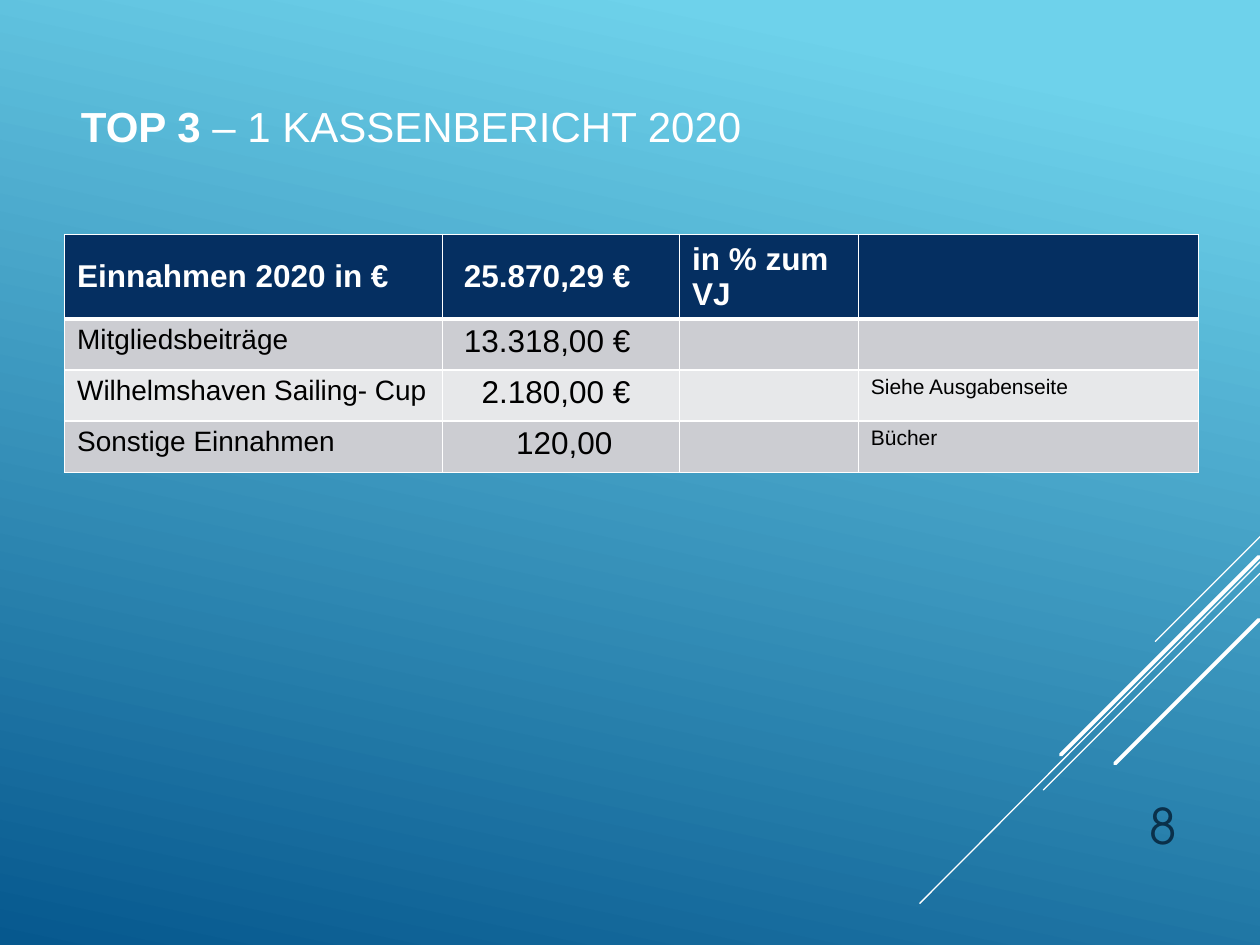
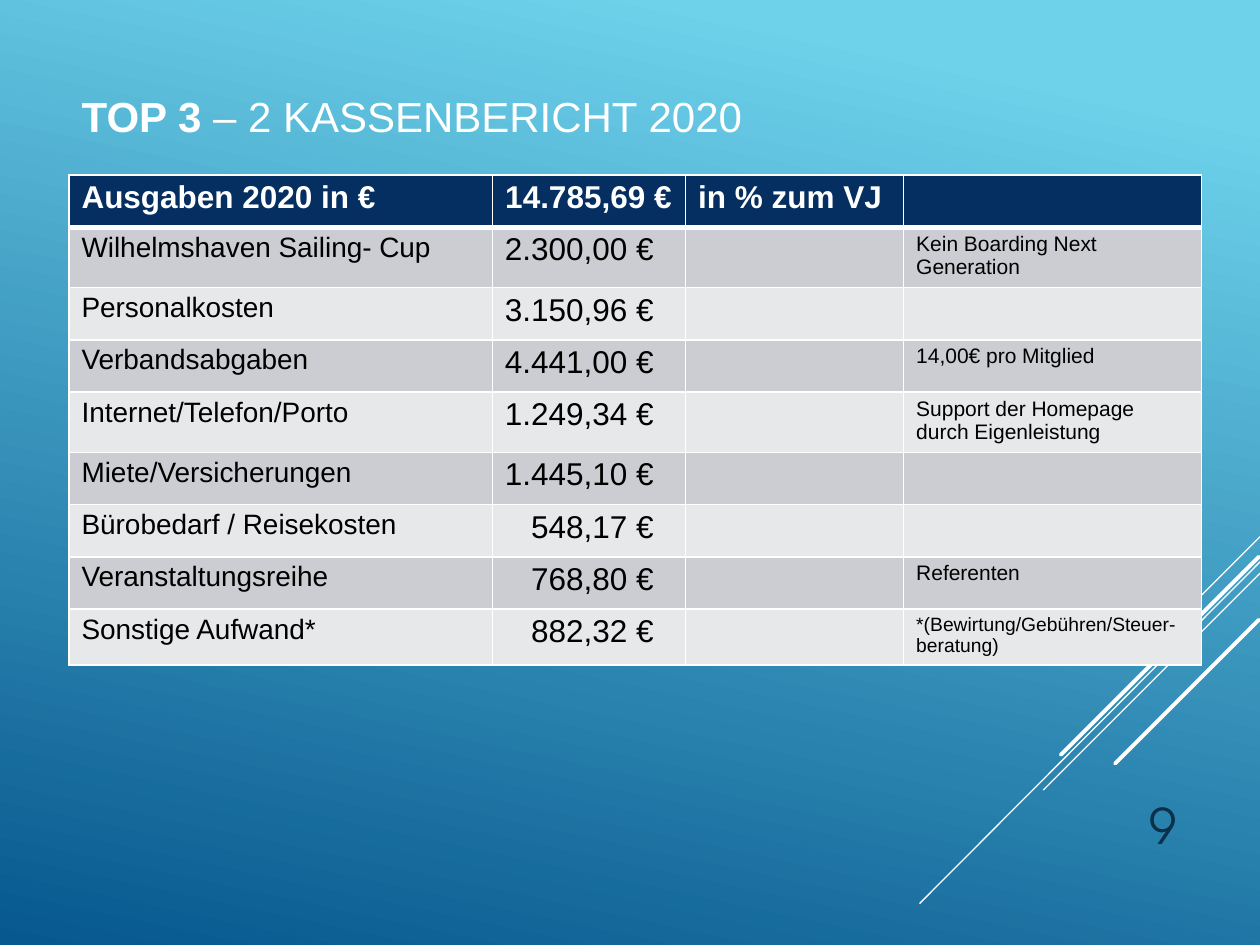
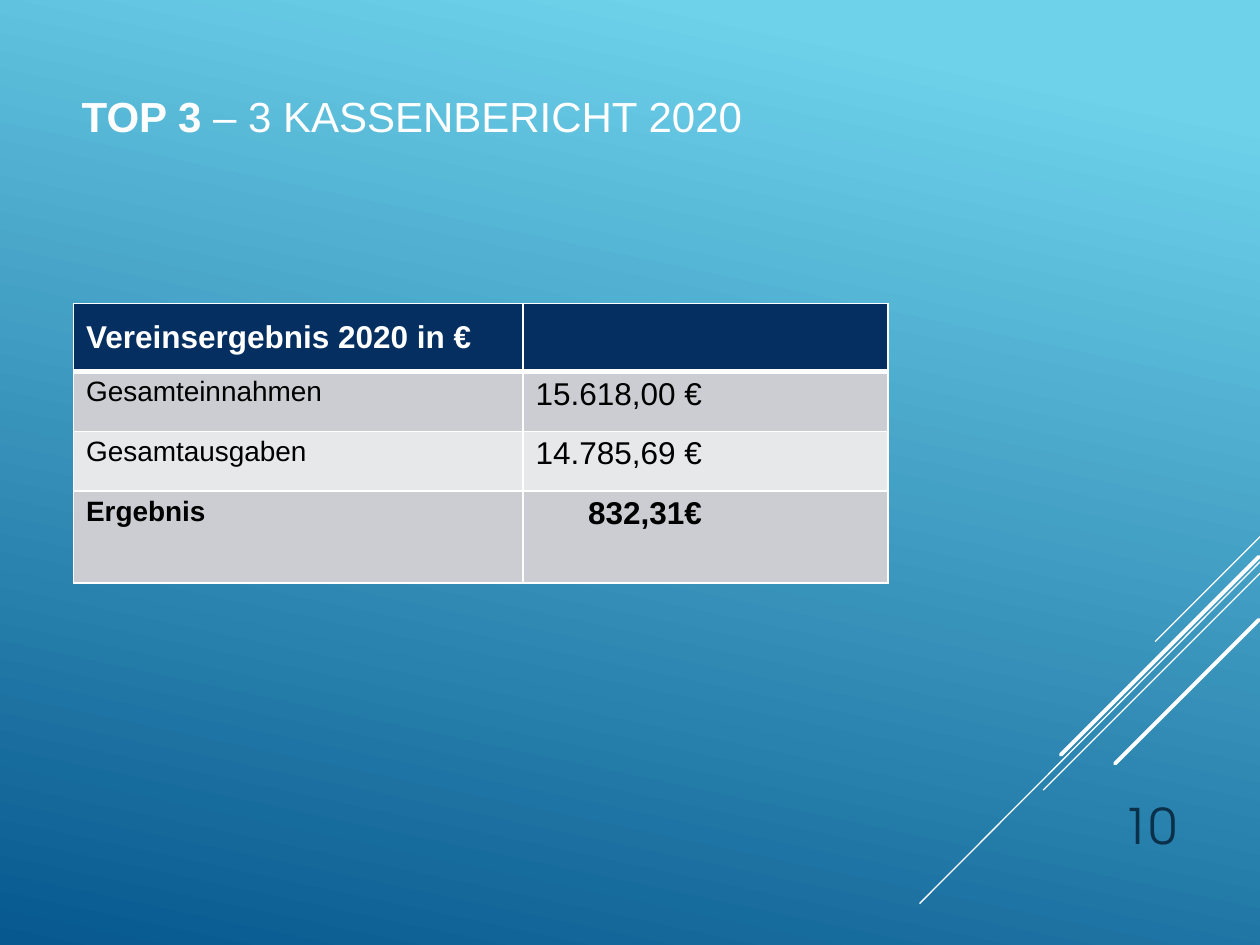
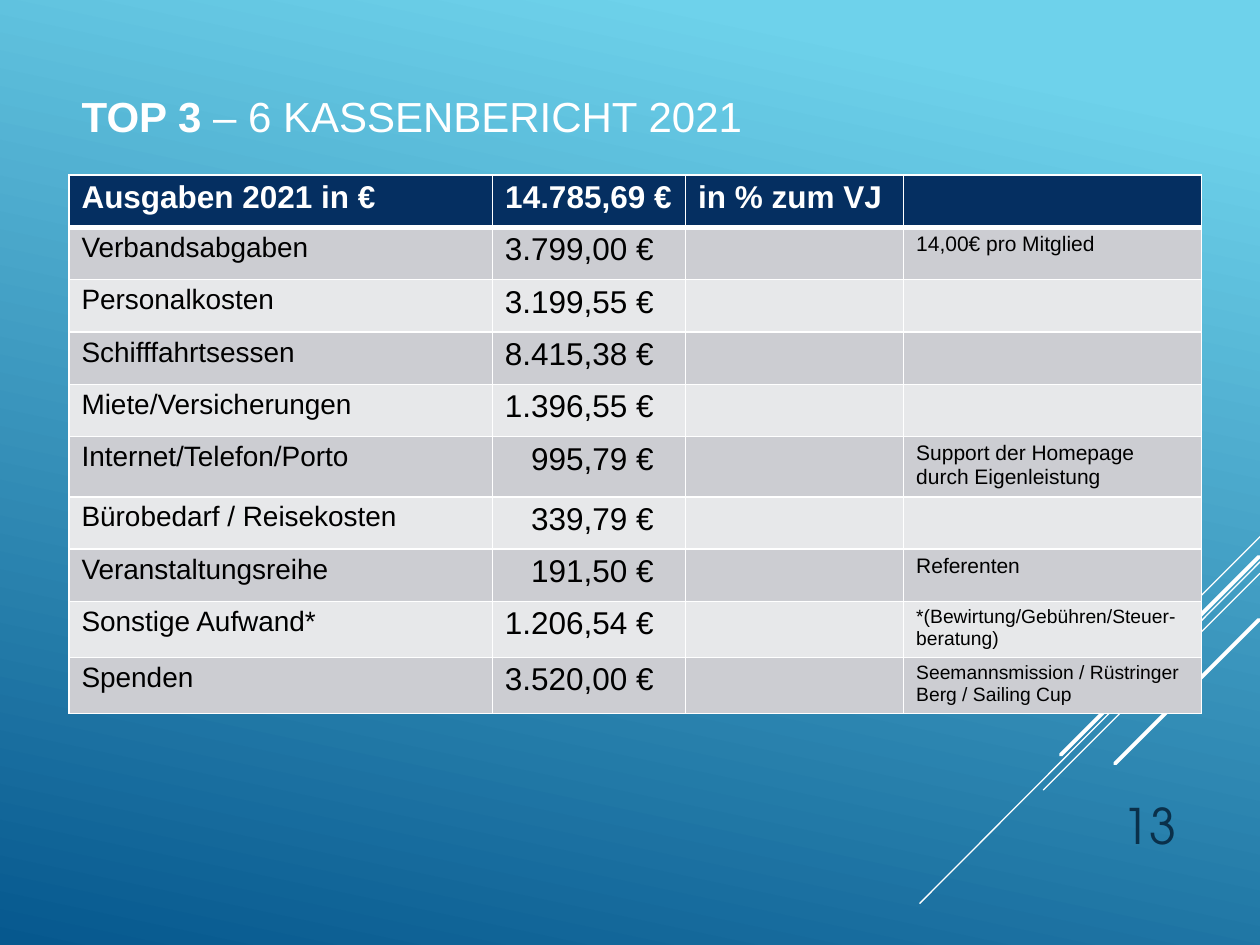
from dataclasses import dataclass

from lxml import etree
from pptx import Presentation
from pptx.dml.color import RGBColor
from pptx.enum.shapes import MSO_CONNECTOR
from pptx.enum.text import MSO_ANCHOR, PP_ALIGN
from pptx.oxml.ns import qn
from pptx.util import Pt

STRAIGHT = MSO_CONNECTOR.STRAIGHT
TOP, MIDDLE, BOTTOM = MSO_ANCHOR.TOP, MSO_ANCHOR.MIDDLE, MSO_ANCHOR.BOTTOM
LEFT, RIGHT = PP_ALIGN.LEFT, PP_ALIGN.RIGHT


@dataclass(frozen=True)
class Theme:
    font: str = "Arial"
    number_font: str = "TeX Gyre Adventor"
    white: str = "FFFFFF"
    black: str = "000000"
    sky: str = "6ED2EB"
    sea: str = "06588E"
    navy: str = "052F61"
    number: str = "0A304A"
    bands: tuple = ("CCCDD2", "E7E8EA")
    title_size: float = 24
    number_size: float = 28
    amount_size: float = 18
    label_size: float = 16
    note_size: float = 12
    small_note_size: float = 11
    grid_width: float = 1
    header_rule: float = 3
    cell_inset: float = 8
    amount_left_inset: float = 2
    header_padding: float = 2.6
    body_padding: float = 2.8
    missing_euro: float = 10.3


@dataclass(frozen=True)
class Report:
    number: int
    title: str
    title_at: tuple
    table_at: tuple
    columns: tuple
    heights: tuple
    header: tuple
    header_anchor: object
    header_inset: float
    amount_inset: float
    rows: tuple
    small_notes: tuple = ()
    total: str = ""


THEME = Theme()

STRIPES = (
    (720, 306.7, 660.2, 366.5, 0.75),
    (720, 321.1, 525.6, 516.2, 0.75),
    (720, 327.6, 596.2, 451.4, 0.75),
    (719.3, 318.2, 606.2, 431.3, 2.25),
    (719.3, 354.2, 637.2, 436.3, 2.25),
)

TITLE_AT = (39.6, 20.5)
EXPENSE_AT = (39.4, 100.1)
EXPENSE_COLUMNS = (242, 110.4, 124.6, 170.3)
EXPENSE_ROW = 29.9
HOMEPAGE_NOTE = "Support der Homepage durch Eigenleistung"
OTHER_NOTE = "*(Bewirtung/Gebühren/Steuer-beratung)"
DONATION_NOTE = "Seemannsmission / Rüstringer Berg / Sailing Cup"


def expense_report(number, part, year, rows):
    return Report(
        number, f" – {part} KASSENBERICHT {year}", TITLE_AT, EXPENSE_AT,
        EXPENSE_COLUMNS, (EXPENSE_ROW,) * (len(rows) + 1),
        (f"Ausgaben {year} in €", "14.785,69 €", "in % zum VJ", ""),
        TOP, THEME.cell_inset, 18.3, rows, (OTHER_NOTE, DONATION_NOTE),
    )


REPORTS = (
    Report(
        8, " – 1 KASSENBERICHT 2020", (39.2, 25.9), (36.9, 133.9),
        (216, 135.4, 102.2, 194.4), (28.1, 29.2, 29.2, 29.2),
        ("Einnahmen 2020 in €", "25.870,29 €", "in % zum VJ", ""),
        MIDDLE, 28.1, 28.1,
        (
            ("Mitgliedsbeiträge", "13.318,00 €", "", ""),
            ("Wilhelmshaven Sailing- Cup", "2.180,00 €", "", "Siehe Ausgabenseite"),
            ("Sonstige Einnahmen", "120,00", "", "Bücher"),
        ),
    ),
    expense_report(9, 2, 2020, (
        ("Wilhelmshaven Sailing- Cup", "2.300,00 €", "", "Kein Boarding Next Generation"),
        ("Personalkosten", "3.150,96 €", "", ""),
        ("Verbandsabgaben", "4.441,00 €", "", "14,00€ pro Mitglied"),
        ("Internet/Telefon/Porto", "1.249,34 €", "", HOMEPAGE_NOTE),
        ("Miete/Versicherungen", "1.445,10 €", "", ""),
        ("Bürobedarf / Reisekosten", "548,17 €", "", ""),
        ("Veranstaltungsreihe", "768,80 €", "", "Referenten"),
        ("Sonstige Aufwand*", "882,32 €", "", OTHER_NOTE),
    )),
    Report(
        10, " – 3 KASSENBERICHT 2020", TITLE_AT, (42, 173.5),
        (256.8, 208.6), (38.9, 34.1, 34.1, 52.6),
        ("Vereinsergebnis 2020 in €", ""),
        MIDDLE, THEME.cell_inset, 106.3,
        (
            ("Gesamteinnahmen", "15.618,00 €"),
            ("Gesamtausgaben", "14.785,69 €"),
            ("Ergebnis", "832,31€"),
        ),
        total="Ergebnis",
    ),
    expense_report(13, 6, 2021, (
        ("Verbandsabgaben", "3.799,00 €", "", "14,00€ pro Mitglied"),
        ("Personalkosten", "3.199,55 €", "", ""),
        ("Schifffahrtsessen", "8.415,38 €", "", ""),
        ("Miete/Versicherungen", "1.396,55 €", "", ""),
        ("Internet/Telefon/Porto", "995,79 €", "", HOMEPAGE_NOTE),
        ("Bürobedarf / Reisekosten", "339,79 €", "", ""),
        ("Veranstaltungsreihe", "191,50 €", "", "Referenten"),
        ("Sonstige Aufwand*", "1.206,54 €", "", OTHER_NOTE),
        ("Spenden", "3.520,00 €", "", DONATION_NOTE),
    )),
)


def rgb(color):
    return RGBColor.from_string(color)


def add_run(paragraph, text, size, color, bold=False, font=THEME.font):
    run = paragraph.add_run()
    run.text = text
    run.font.name = font
    run.font.size = Pt(size)
    run.font.bold = bold
    run.font.color.rgb = rgb(color)


def add_text_area(slide, left, top, width, height, anchor, align=LEFT):
    frame = slide.shapes.add_textbox(Pt(left), Pt(top), Pt(width), Pt(height)).text_frame
    frame.word_wrap = True
    frame.vertical_anchor = anchor
    paragraph = frame.paragraphs[0]
    paragraph.alignment = align
    return paragraph


def paint_background(master):
    fill = master.background.fill
    fill.gradient()
    fill.gradient_angle = 258
    for stop, color, position in zip(fill.gradient_stops, (THEME.sky, THEME.sea), (0.1, 1)):
        stop.color.rgb = rgb(color)
        stop.position = position


def add_stripes(slide):
    for x1, y1, x2, y2, width in STRIPES:
        stripe = slide.shapes.add_connector(STRAIGHT, Pt(x1), Pt(y1), Pt(x2), Pt(y2))
        stripe.line.color.rgb = rgb(THEME.white)
        stripe.line.width = Pt(width)
        properties = stripe._element.spPr
        properties.find(qn("a:ln")).set("cap", "rnd")
        etree.SubElement(properties, qn("a:effectLst"))


def add_title(slide, report):
    title = add_text_area(slide, *report.title_at, 516.2, 91.4, MIDDLE)
    add_run(title, "TOP 3", THEME.title_size, THEME.white, True)
    add_run(title, report.title, THEME.title_size, THEME.white)


def add_slide_number(slide, number):
    paragraph = add_text_area(slide, 612, 439.2, 67.7, 52.6, BOTTOM, RIGHT)
    add_run(paragraph, str(number), THEME.number_size, THEME.number, font=THEME.number_font)


def set_borders(cell, top, bottom):
    properties = cell._tc.get_or_add_tcPr()
    sides = (("L", THEME.grid_width), ("R", THEME.grid_width), ("T", top), ("B", bottom))
    for index, (side, width) in enumerate(sides):
        border = etree.Element(qn(f"a:ln{side}"), w=str(Pt(width)))
        fill = etree.SubElement(border, qn("a:solidFill"))
        etree.SubElement(fill, qn("a:srgbClr"), val=THEME.white)
        properties.insert(index, border)


def fill_cell(cell, text, size, color, bold, fill, padding):
    cell.fill.solid()
    cell.fill.fore_color.rgb = rgb(fill)
    cell.margin_top = cell.margin_bottom = Pt(padding)
    if text:
        add_run(cell.text_frame.paragraphs[0], text, size, color, bold)


def align_amount(cell, inset):
    cell.margin_left = Pt(THEME.amount_left_inset)
    cell.margin_right = Pt(inset)
    cell.text_frame.paragraphs[0].alignment = RIGHT


def fill_header(table, report):
    for column, text in enumerate(report.header):
        cell = table.cell(0, column)
        fill_cell(cell, text, THEME.amount_size, THEME.white, True,
                  THEME.navy, THEME.header_padding)
        cell.vertical_anchor = report.header_anchor
        set_borders(cell, THEME.grid_width, THEME.header_rule)
    align_amount(table.cell(0, 1), report.header_inset)


def fill_body(table, report):
    sizes = (THEME.label_size, THEME.amount_size, THEME.amount_size, THEME.note_size)
    for row, entries in enumerate(report.rows, 1):
        top = THEME.header_rule if row == 1 else THEME.grid_width
        bold = entries[0] == report.total
        for column, text in enumerate(entries):
            size = THEME.small_note_size if text in report.small_notes else sizes[column]
            cell = table.cell(row, column)
            fill_cell(cell, text, size, THEME.black, bold,
                      THEME.bands[(row - 1) % 2], THEME.body_padding)
            set_borders(cell, top, THEME.grid_width)
        missing = 0 if "€" in entries[1] else THEME.missing_euro
        align_amount(table.cell(row, 1), report.amount_inset + missing)


def add_report_table(slide, report):
    left, top = report.table_at
    table = slide.shapes.add_table(
        len(report.heights), len(report.columns), Pt(left), Pt(top),
        Pt(sum(report.columns)), Pt(sum(report.heights)),
    ).table
    for column, width in zip(table.columns, report.columns):
        column.width = Pt(width)
    for row, height in zip(table.rows, report.heights):
        row.height = Pt(height)
    fill_header(table, report)
    fill_body(table, report)


def main():
    deck = Presentation()
    deck.slide_width, deck.slide_height = Pt(720), Pt(540)
    paint_background(deck.slide_master)
    for report in REPORTS:
        slide = deck.slides.add_slide(deck.slide_layouts[6])
        add_stripes(slide)
        add_slide_number(slide, report.number)
        add_title(slide, report)
        add_report_table(slide, report)
    deck.save("out.pptx")


if __name__ == "__main__":
    main()
